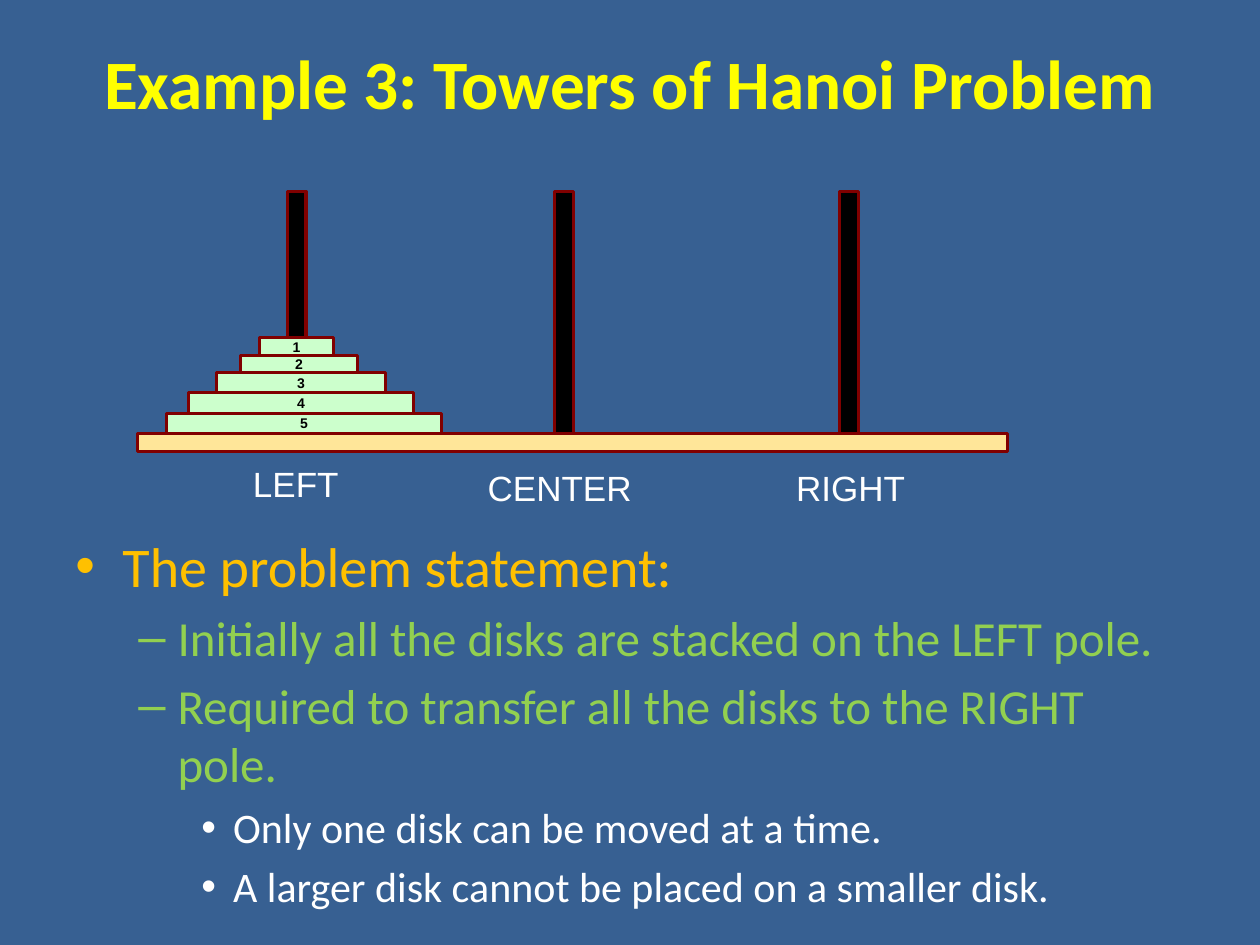
"""Build the Towers of Hanoi problem slide."""
import dataclasses

import lxml.etree
import pptx
import pptx.dml.color
import pptx.enum.shapes
import pptx.enum.text
import pptx.oxml.ns
import pptx.util

Cm = pptx.util.Cm
Pt = pptx.util.Pt


@dataclasses.dataclass(frozen=True)
class Theme:
    """Colours, fonts and type sizes of the slide."""

    background: str = "376092"
    title: str = "FFFF00"
    outline: str = "800000"
    pole: str = "000000"
    base: str = "FFE699"
    disk: str = "CCFFCC"
    disk_text: str = "000000"
    label: str = "FFFFFF"
    level_colors: tuple = ("FFC000", "92D050", "FFFFFF")
    level_sizes: tuple = (32, 28, 24)
    heading_font: str = "Calibri"
    diagram_font: str = "Arial"
    title_size: float = 39.6
    disk_size: float = 8
    label_size: float = 20
    outline_width: float = 1.75


class SlideBuilder:
    """Hold the theme and the current slide."""

    def __init__(self, slide, theme):
        """Keep the slide and theme and paint the background."""
        self.slide = slide
        self.theme = theme
        fill = slide.background.fill
        fill.solid()
        fill.fore_color.rgb = self.color(theme.background)

    def color(self, value):
        """Turn a hex string into a colour."""
        return pptx.dml.color.RGBColor.from_string(value)

    def format_runs(self, para, font, size, color, bold=False):
        """Style every run of a paragraph."""
        for span in para.runs:
            span.font.name = font
            span.font.size = Pt(size)
            span.font.bold = bold
            span.font.color.rgb = self.color(color)

    def text_box(self, left, top, width, height):
        """Add an empty wrapping text box and return its frame."""
        box = self.slide.shapes.add_textbox(Cm(left), Cm(top), Cm(width), Cm(height))
        box.text_frame.word_wrap = True
        return box.text_frame

    def title(self, text, left, top, width, height):
        """Add the centred slide title."""
        frame = self.text_box(left, top, width, height)
        frame.vertical_anchor = pptx.enum.text.MSO_ANCHOR.MIDDLE
        frame.text = text
        para = frame.paragraphs[0]
        para.alignment = pptx.enum.text.PP_ALIGN.CENTER
        theme = self.theme
        self.format_runs(para, theme.heading_font, theme.title_size, theme.title, True)

    def block(self, left, top, width, height, fill):
        """Add an outlined rectangle."""
        shape = self.slide.shapes.add_shape(
            pptx.enum.shapes.MSO_SHAPE.RECTANGLE, Cm(left), Cm(top), Cm(width), Cm(height)
        )
        shape.shadow.inherit = False
        shape.fill.solid()
        shape.fill.fore_color.rgb = self.color(fill)
        shape.line.color.rgb = self.color(self.theme.outline)
        shape.line.width = Pt(self.theme.outline_width)
        return shape

    def disk(self, number, left, top, width, height):
        """Add a disk with its number inside the outline."""
        frame = self.block(left, top, width, height, self.theme.disk).text_frame
        frame.word_wrap = False
        frame.margin_top = frame.margin_bottom = Cm(0)
        frame.vertical_anchor = pptx.enum.text.MSO_ANCHOR.MIDDLE
        frame.text = str(number)
        para = frame.paragraphs[0]
        para.alignment = pptx.enum.text.PP_ALIGN.CENTER
        theme = self.theme
        self.format_runs(para, theme.diagram_font, theme.disk_size, theme.disk_text, True)

    def label(self, text, left, top, width, height):
        """Add a pole label."""
        frame = self.text_box(left, top, width, height)
        frame.text = text
        para = frame.paragraphs[0]
        para.space_before = Pt(2)
        theme = self.theme
        self.format_runs(para, theme.diagram_font, theme.label_size, theme.label)

    def bullets(self, items, left, top, width, height):
        """Add a multi-level bullet list from (level, text) pairs."""
        levels = (("•", 0.95, 0.95), ("–", 2.06, 0.79), ("•", 3.18, 0.64))
        frame = self.text_box(left, top, width, height)
        for index, (level, text) in enumerate(items):
            para = frame.add_paragraph() if index else frame.paragraphs[0]
            para.text = text
            para.level = level
            para.space_before = Pt(5 if index else 2)
            theme = self.theme
            self.format_runs(
                para, theme.heading_font, theme.level_sizes[level], theme.level_colors[level]
            )
            character, margin, hanging = levels[level]
            properties = para._p.get_or_add_pPr()
            properties.set("marL", str(Cm(margin)))
            properties.set("indent", str(-Cm(hanging)))
            for tag, name, value in (
                ("a:buFont", "typeface", "Arial"),
                ("a:buChar", "char", character),
            ):
                mark = lxml.etree.SubElement(properties, pptx.oxml.ns.qn(tag))
                mark.set(name, value)


def main():
    """Build and save the deck."""
    deck = pptx.Presentation()
    deck.slide_width, deck.slide_height = Cm(25.4), Cm(19.05)
    theme = Theme()
    page = SlideBuilder(deck.slides.add_slide(deck.slide_layouts[6]), theme)
    page.title("Example 3: Towers of Hanoi Problem", 1.27, 0.05, 22.86, 3.18)

    base_top = 8.74
    pole_top = 3.86
    for left in (5.79, 11.18, 16.92):
        page.block(left, pole_top, 0.38, base_top - pole_top, theme.pole)
    page.block(2.77, base_top, 17.55, 0.36, theme.base)

    disks = (
        (5, 3.35, 5.56, 0.41),
        (4, 3.81, 4.52, 0.41),
        (3, 4.37, 3.4, 0.41),
        (2, 4.85, 2.36, 0.35),
        (1, 5.23, 1.5, 0.35),
    )
    top = base_top
    for number, left, width, height in disks:
        top -= height
        page.disk(number, left, top, width, height)

    for text, left, label_top, width in (
        ("LEFT", 4.85, 9.19, 2.36),
        ("CENTER", 9.58, 9.27, 4.52),
        ("RIGHT", 15.8, 9.27, 3.2),
    ):
        page.label(text, left, label_top, width, 1.12)

    statement = (
        (0, "The problem statement:"),
        (1, "Initially all the disks are stacked on the LEFT pole."),
        (1, "Required to transfer all the disks to the RIGHT pole."),
        (2, "Only one disk can be moved at a time."),
        (2, "A larger disk cannot be placed on a smaller disk."),
    )
    page.bullets(statement, 1.27, 10.59, 22.86, 8.26)
    deck.save("out.pptx")


if __name__ == "__main__":
    main()
